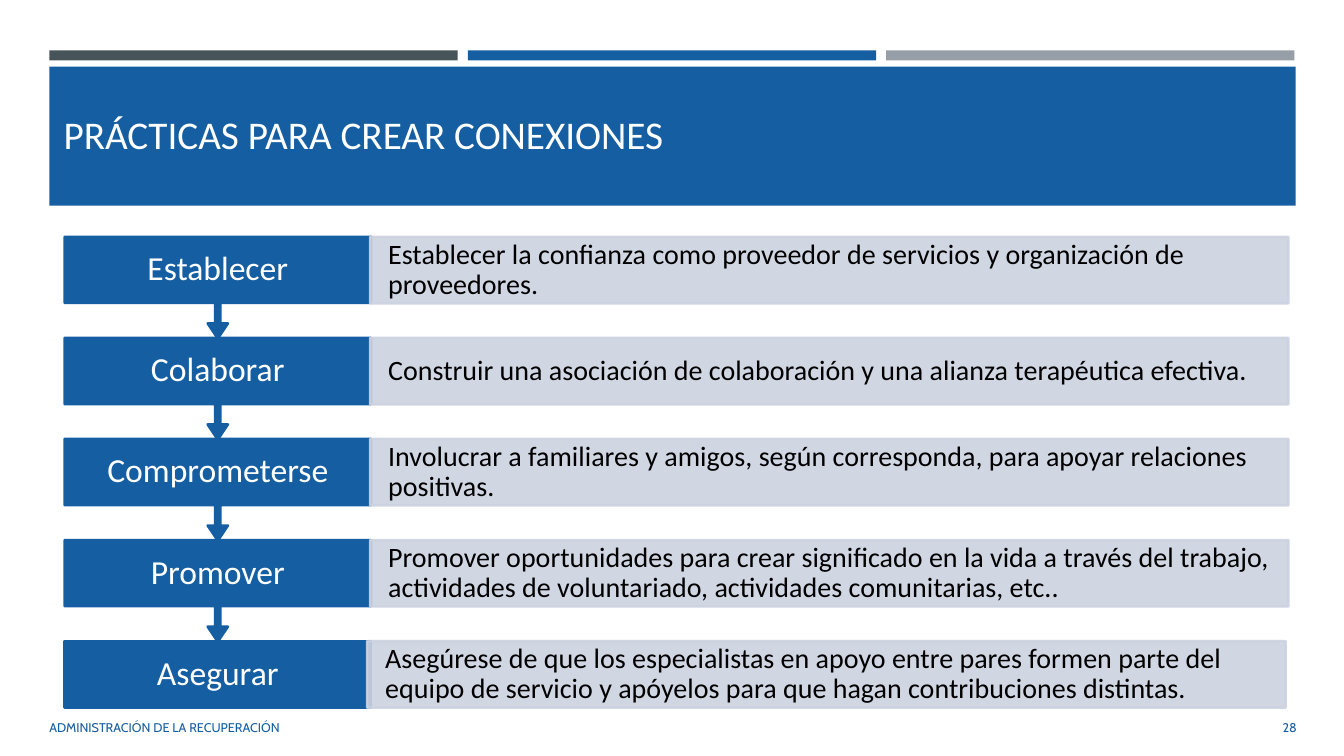
from lxml import etree
from pptx import Presentation, util as u
from pptx.dml import color
from pptx.enum import shapes, text
from pptx.oxml import ns

BLUE, SLATE, GREY, PALE = "155EA1", "465359", "969FA7", "CCD2E0"
WHITE, BLACK = "FFFFFF", "000000"

PRACTICES = [
    ("Establecer", "Establecer la confianza como proveedor de servicios y organización de proveedores."),
    ("Colaborar", "Construir una asociación de colaboración y una alianza terapéutica efectiva."),
    ("Comprometerse", "Involucrar a familiares y amigos, según corresponda, para apoyar relaciones positivas."),
    ("Promover", "Promover oportunidades para crear significado en la vida a través del trabajo, "
                 "actividades de voluntariado, actividades comunitarias, etc.."),
    ("Asegurar", "Asegúrese de que los especialistas en apoyo entre pares formen parte del equipo "
                 "de servicio y apóyelos para que hagan contribuciones distintas."),
]


def rgb(value):
    return color.RGBColor.from_string(value)


class SlideBuilder:
    body_font = "Calibri"
    footer_font = "Cabin"

    def __init__(self, presentation):
        self.width = presentation.slide_width
        self.height = presentation.slide_height
        self.slide = presentation.slides.add_slide(presentation.slide_layouts[5])

    def box(self, left, top, width, height):
        return (int(self.width * left / 100), int(self.height * top / 100),
                int(self.width * width / 100), int(self.height * height / 100))

    def set_text(self, shape, words, size, ink, font, align, side=0.1, bottom=0.05):
        frame = shape.text_frame
        frame.word_wrap = True
        frame.auto_size = text.MSO_AUTO_SIZE.NONE
        frame.vertical_anchor = text.MSO_ANCHOR.MIDDLE
        frame.margin_left = frame.margin_right = u.Inches(side)
        frame.margin_top, frame.margin_bottom = u.Inches(0.05), u.Inches(bottom)
        paragraph = frame.paragraphs[0]
        paragraph.text = words
        paragraph.alignment = align
        paragraph.line_spacing = 0.9
        paragraph.font.size = u.Pt(size)
        paragraph.font.name = font
        paragraph.font.color.rgb = rgb(ink)

    def title(self, words, place):
        shape = self.slide.shapes.title
        shape.left, shape.top, shape.width, shape.height = self.box(*place)
        self.set_text(shape, words, 28, WHITE, self.body_font, text.PP_ALIGN.LEFT, bottom=0.44)

    def shape(self, place, fill, kind=shapes.MSO_SHAPE.RECTANGLE, outlined=False, opacity=100):
        shape = self.slide.shapes.add_shape(kind, *self.box(*place))
        shape.shadow.inherit = False
        shape.fill.solid()
        shape.fill.fore_color.rgb = rgb(fill)
        if outlined:
            shape.line.color.rgb = rgb(fill)
            shape.line.width = u.Pt(1.75)
        else:
            shape.line.fill.background()
        if opacity < 100:
            for paint in shape._element.spPr.iter(ns.qn("a:srgbClr")):
                etree.SubElement(paint, ns.qn("a:alpha")).set("val", str(opacity * 1000))
        return shape

    def step(self, place, words, arrow_height=None):
        left, top, width, height = place
        if arrow_height:
            shape = self.shape((left, top, width, arrow_height), BLUE,
                               shapes.MSO_SHAPE.DOWN_ARROW_CALLOUT, outlined=True)
            for index, share in enumerate((0.05, 0.1, 0.15, 0.65)):
                shape.adjustments[index] = share
        else:
            shape = self.shape(place, BLUE, outlined=True)
        self.set_text(shape, words, 24, WHITE, self.body_font, text.PP_ALIGN.CENTER, side=0.22)

    def description(self, place, words):
        shape = self.shape(place, PALE, outlined=True, opacity=90)
        self.set_text(shape, words, 20, BLACK, self.body_font, text.PP_ALIGN.LEFT, side=0.18)

    def footer(self, place, words, align):
        shape = self.slide.shapes.add_textbox(*self.box(*place))
        self.set_text(shape, words, 9, BLUE, self.footer_font, align)


def main():
    presentation = Presentation()
    presentation.slide_width = u.Inches(13.33)
    presentation.slide_height = u.Inches(7.5)
    builder = SlideBuilder(presentation)

    for column, fill in enumerate((SLATE, BLUE, GREY)):
        builder.shape((3.68 + 31.13 * column, 6.67, 30.38, 1.33), fill)
    banner = builder.shape((3.68, 8.8, 92.72, 18.4), BLUE)
    builder.title("PRÁCTICAS PARA CREAR CONEXIONES", (3.98, 13.47, 91.9, 14.4))
    banner._element.addnext(builder.slide.shapes.title._element)

    last = len(PRACTICES) - 1
    for row, (name, detail) in reversed(list(enumerate(PRACTICES))):
        top = 31.33 + 13.37 * row
        builder.step((4.8, top, 22.81, 8.8), name, 13.47 if row < last else None)
        left = 27.53 if row < last else 27.31
        builder.description((left, top, 68.34, 8.8), detail)

    builder.footer((2.93, 93.73, 55.96, 5.33), "ADMINISTRACIÓN DE LA RECUPERACIÓN", text.PP_ALIGN.LEFT)
    builder.footer((88.6, 93.73, 8.63, 5.33), "28", text.PP_ALIGN.RIGHT)
    presentation.save("out.pptx")


if __name__ == "__main__":
    main()
